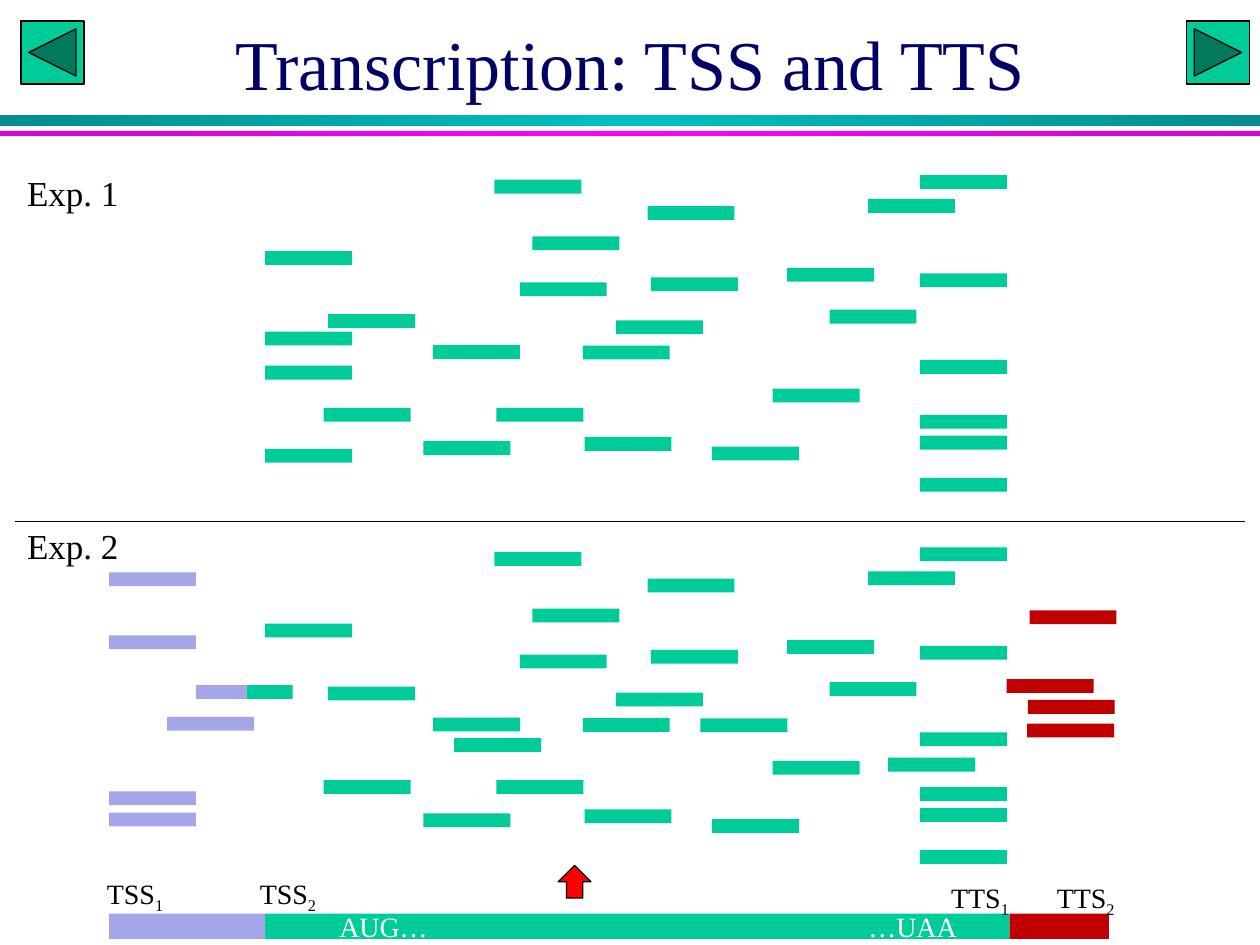
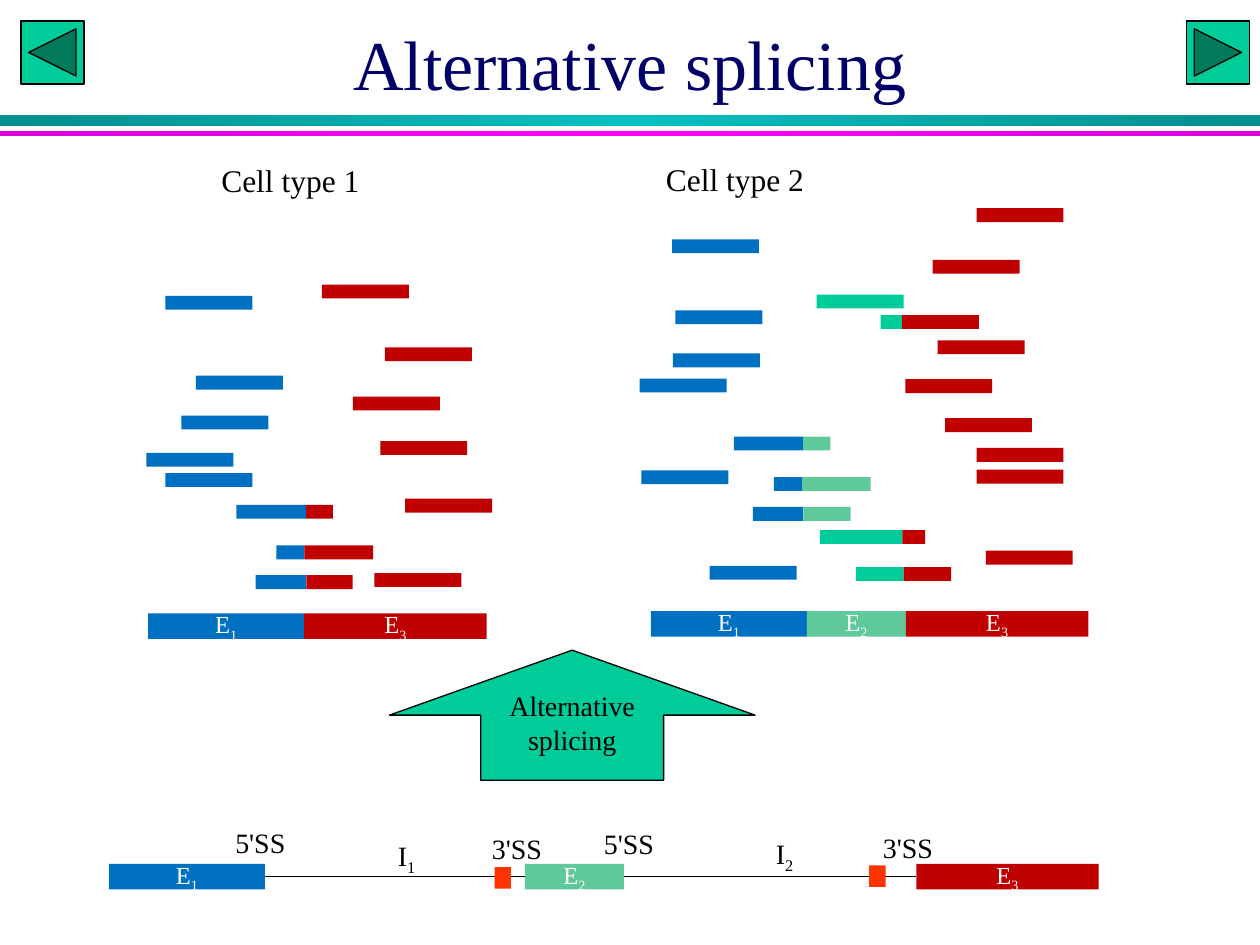
from copy import deepcopy

from lxml.etree import SubElement
from pptx import Presentation
from pptx.dml.color import RGBColor
from pptx.enum.shapes import MSO_CONNECTOR, MSO_SHAPE
from pptx.enum.text import MSO_ANCHOR, PP_ALIGN
from pptx.oxml.ns import qn
from pptx.util import Pt

# Shared look
FONT = "Times New Roman"
BLACK = RGBColor(0x00, 0x00, 0x00)
WHITE = RGBColor(0xFF, 0xFF, 0xFF)
NAVY = RGBColor(0x00, 0x00, 0x66)
GREEN = RGBColor(0x00, 0xCC, 0x99)
MINT = RGBColor(0x60, 0xC9, 0x9C)
LILAC = RGBColor(0xA5, 0xA5, 0xE9)
BLUE = RGBColor(0x00, 0x70, 0xC0)
DARK_RED = RGBColor(0xC0, 0x00, 0x00)
RED = RGBColor(0xFF, 0x00, 0x00)
ORANGE = RGBColor(0xFF, 0x33, 0x00)
TEAL_EDGE = RGBColor(0x00, 0x8E, 0x8E)
TEAL = RGBColor(0x00, 0xC0, 0xC0)
MAGENTA_EDGE = RGBColor(0xDA, 0x00, 0xDA)
MAGENTA = RGBColor(0xFF, 0x00, 0xFF)

SLIDE_WIDTH, SLIDE_HEIGHT = 720, 540
READ_WIDTH, READ_HEIGHT = 49.7, 7.9
BAR_HEIGHT = 14.6

# Bands: top, height, edge colour, middle colour
BANDS = [(66, 6, TEAL_EDGE, TEAL), (74.9, 2.9, MAGENTA_EDGE, MAGENTA)]
# Navigation buttons: preset, left
BUTTONS = [
    (MSO_SHAPE.ACTION_BUTTON_BACK_OR_PREVIOUS, 12),
    (MSO_SHAPE.ACTION_BUTTON_FORWARD_OR_NEXT, 678),
]

# Transcription: read positions (left, top)
SHARED_READS = [
    (242, 252), (282.5, 102.7), (151.5, 143.5), (297, 161.3), (370, 117.8),
    (187.5, 179.5), (333, 197.5), (372, 158.5), (185, 233), (334, 249.7),
    (441.5, 222), (407, 255.2), (304.2, 135), (449.8, 153), (496, 113.7),
    (474, 177), (352, 183), (247.5, 197.2), (283.7, 233),
]
LAST_EXON_LEFT = 525.7
LAST_EXON_TOPS = [100, 156.2, 205.7, 237, 249, 273]
SHARED_READS += [(LAST_EXON_LEFT, top) for top in LAST_EXON_TOPS]
EXPERIMENT_SHIFT = 212.8
FIRST_ONLY = [(151.5, 189.5), (151.5, 209), (151.5, 256.5)]
SECOND_ONLY = [(507.5, 433), (400.2, 410.5), (259.5, 421.8)]
UPSTREAM_READS = [(62.3, 327), (62.3, 363), (95.5, 409.6), (62.3, 452.2),
                  (62.3, 464.3)]
DOWNSTREAM_READS = [(588.3, 348.8), (575.2, 388), (587.3, 400), (587, 413.5)]
TSS_JUNCTION = (112, 391.5, 141, 167.3, LILAC, GREEN)
# Gene segments: left, right, colour
GENE_SEGMENTS = [(151.5, 577, GREEN), (62.3, 151.5, LILAC), (577, 633.7, DARK_RED)]
CODON_TABS = [35.3, 337.6]
# Labels: text, left, top, width, size, tab stops
TRANSCRIPTION_LABELS = [
    ("Exp. 1", 8.4, 94.3, 72, 20, []),
    ("Exp. 2", 8.4, 296, 72, 20, []),
    ("TSS_1\tTSS_2", 54, 497.5, 159, 16, [87.4]),
    ("TTS_1\tTTS_2", 536.4, 499.7, 117.5, 16, [60.4]),
]

# Splicing: whole reads by exon colour
EXON_READS = {
    BLUE: [
        (384, 136.8), (365.5, 216.3), (386, 177.3), (366.5, 268.8),
        (405.5, 323.3), (384.5, 202), (83.7, 258.8), (103.7, 237.5),
        (94.5, 270.4), (112, 214.7), (94.5, 169),
    ],
    DARK_RED: [
        (214, 327.5), (184, 162.6), (220, 198.5), (217.3, 252), (201.7, 226.7),
        (231.5, 285), (533, 148.5), (535.8, 194.5), (558, 119), (540, 239),
        (563.3, 314.7), (558, 256), (517.3, 216.7), (558, 268.4),
    ],
    GREEN: [(466.7, 168.3)],
}
# Reads across a junction: left, top, junction, right, two colours
JUNCTION_READS = [
    (146, 328.7, 175, 201.5, BLUE, DARK_RED),
    (158, 311.7, 174, 213.3, BLUE, DARK_RED),
    (135, 288.5, 175, 190.3, BLUE, DARK_RED),
    (430.3, 289.7, 459, 486, BLUE, MINT),
    (442.3, 272.6, 458.3, 497.5, BLUE, MINT),
    (419.4, 249.5, 459, 474.6, BLUE, MINT),
    (489, 324, 516.4, 543.6, GREEN, DARK_RED),
    (468.5, 302.9, 515.7, 528.6, GREEN, DARK_RED),
    (503.3, 180, 515.5, 559.4, GREEN, DARK_RED),
]
# Exons: width, colour
EXONS = {"E_1": (89.1, BLUE), "E_2": (56.5, MINT), "E_3": (104.3, DARK_RED)}
# Transcripts: left, top, exons
TRANSCRIPTS = [(84.7, 350.5, ["E_1", "E_3"]), (372, 349.2, ["E_1", "E_2", "E_3"])]
GENE_TOP, GENE_AXIS = 493.7, 501
GENE_EXONS = [("E_1", 62.3), ("E_2", 300), ("E_3", 523.6)]
ACCEPTOR_SITES = [(282.6, 495.5), (496.7, 494.6)]
SPLICING_LABELS = [
    ("Cell type 1", 119.4, 88.6, 128, 18, []),
    ("Cell type 2", 373.5, 88, 128, 18, []),
    ("I_1", 220.3, 475.7, 27.5, 16, []),
    ("I_2", 436.3, 474.3, 27.5, 16, []),
    ("5'SS", 127.4, 468.4, 52, 16, []),
    ("5'SS", 338, 468.8, 52, 16, []),
    ("3'SS", 274, 471.5, 52, 16, []),
    ("3'SS", 497.5, 471, 52, 16, []),
]


def apply_format(target, values):
    for name, value in values.items():
        setattr(target, name, value)


def write(shape, text, size, colour, align=PP_ALIGN.LEFT,
          anchor=MSO_ANCHOR.TOP, tabs=()):
    """Write text; the character after each underscore is a subscript."""
    apply_format(shape.text_frame, {"word_wrap": True, "vertical_anchor": anchor})
    para = shape.text_frame.paragraphs[0]
    para.alignment = align
    if tabs:
        tab_list = SubElement(para._p.get_or_add_pPr(), qn("a:tabLst"))
        for position in tabs:
            SubElement(tab_list, qn("a:tab"), pos=str(int(Pt(position))), algn="l")
    first, *rest = text.split("_")
    pieces = [(first, False)]
    for part in rest:
        pieces += [(part[0], True), (part[1:], False)]
    for content, lowered in pieces:
        if not content:
            continue
        span = para.add_run()
        span.text = content
        apply_format(span.font, {"name": FONT, "size": Pt(size)})
        span.font.color.rgb = colour
        if lowered:
            span._r.get_or_add_rPr().set("baseline", "-25000")


def add_shape(page, left, top, width, height, colour,
              preset=MSO_SHAPE.RECTANGLE, outlined=False):
    shape = page.shapes.add_shape(preset, Pt(left), Pt(top), Pt(width), Pt(height))
    shape.shadow.inherit = False
    shape.fill.solid()
    shape.fill.fore_color.rgb = colour
    if outlined:
        shape.line.color.rgb = BLACK
        shape.line.width = Pt(0.75)
    else:
        shape.line.fill.background()
    return shape


def add_line(page, start, end, top):
    line = page.shapes.add_connector(
        MSO_CONNECTOR.STRAIGHT, Pt(start), Pt(top), Pt(end), Pt(top))
    line.line.color.rgb = BLACK
    line.line.width = Pt(0.75)
    SubElement(line._element.spPr, qn("a:effectLst"))


def add_reads(page, reads, colour, shift=0):
    for left, top in reads:
        add_shape(page, left, top + shift, READ_WIDTH, READ_HEIGHT, colour)


def add_junction_read(page, left, top, junction, right, first, second):
    add_shape(page, left, top, junction - left, READ_HEIGHT, first)
    add_shape(page, junction, top, right - junction, READ_HEIGHT, second)


def add_exon(page, name, left, top):
    width, colour = EXONS[name]
    exon = add_shape(page, left, top, width, BAR_HEIGHT, colour)
    write(exon, name, 14, WHITE, PP_ALIGN.CENTER, MSO_ANCHOR.MIDDLE)
    return left + width


def add_labels(page, labels):
    for text, left, top, width, size, tabs in labels:
        box = page.shapes.add_textbox(Pt(left), Pt(top), Pt(width), Pt(size + 10.6))
        write(box, text, size, BLACK, tabs=tabs)


def add_band(page, top, height, edge, middle):
    band = add_shape(page, 0, top, SLIDE_WIDTH, height, edge)
    band.fill.gradient()
    band.fill.gradient_angle = 0
    stop_list = band._element.spPr.find(qn("a:gradFill")).find(qn("a:gsLst"))
    stop_list.append(deepcopy(stop_list[0]))
    colours = [(0, edge), (0.5, middle), (1, edge)]
    for stop, (position, colour) in zip(band.fill.gradient_stops, colours):
        stop.position = position
        stop.color.rgb = colour


def add_page(deck, title):
    page = deck.slides.add_slide(deck.slide_layouts[6])
    for band in BANDS:
        add_band(page, *band)
    for preset, left in BUTTONS:
        add_shape(page, left, 12, 36, 36, GREEN, preset, outlined=True)
    box = page.shapes.add_textbox(Pt(54), Pt(0), Pt(612), Pt(72))
    write(box, title, 40, NAVY, PP_ALIGN.CENTER, MSO_ANCHOR.MIDDLE)
    return page


def build_transcription(deck):
    page = add_page(deck, "Transcription: TSS and TTS")
    # Reads of both experiments
    add_reads(page, SHARED_READS + FIRST_ONLY, GREEN)
    add_reads(page, SHARED_READS, GREEN, EXPERIMENT_SHIFT)
    add_reads(page, SECOND_ONLY, GREEN)
    add_reads(page, UPSTREAM_READS, LILAC)
    add_reads(page, DOWNSTREAM_READS, DARK_RED)
    add_junction_read(page, *TSS_JUNCTION)
    add_line(page, 8.6, 711.4, 298)
    # Gene with its codons
    for left, right, colour in GENE_SEGMENTS:
        segment = add_shape(page, left, 522, right - left, BAR_HEIGHT, colour)
        if colour == GREEN:
            write(segment, "\tAUG…\t…UAA", 16, WHITE,
                  anchor=MSO_ANCHOR.MIDDLE, tabs=CODON_TABS)
    add_shape(page, 319, 494.5, 18.7, 18.7, RED, MSO_SHAPE.UP_ARROW, outlined=True)
    add_labels(page, TRANSCRIPTION_LABELS)


def build_splicing(deck):
    page = add_page(deck, "Alternative splicing")
    # Reads of both cell types
    for colour, reads in EXON_READS.items():
        add_reads(page, reads, colour)
    for read in JUNCTION_READS:
        add_junction_read(page, *read)
    # Spliced transcripts
    for left, top, names in TRANSCRIPTS:
        for name in names:
            left = add_exon(page, name, left, top)
    arrow = add_shape(page, 222.5, 371.5, 209, 74.3, GREEN,
                      MSO_SHAPE.UP_ARROW, outlined=True)
    write(arrow, "Alternative splicing", 16, BLACK, PP_ALIGN.CENTER)
    # Gene with introns between the exons
    intron_start = None
    for name, left in GENE_EXONS:
        if intron_start is not None:
            add_line(page, intron_start, left, GENE_AXIS)
        intron_start = add_exon(page, name, left, GENE_TOP)
    for left, top in ACCEPTOR_SITES:
        add_shape(page, left, top, 9.4, 12.3, ORANGE)
    add_labels(page, SPLICING_LABELS)


def main():
    deck = Presentation()
    apply_format(deck, {"slide_width": Pt(SLIDE_WIDTH), "slide_height": Pt(SLIDE_HEIGHT)})
    build_transcription(deck)
    build_splicing(deck)
    deck.save("out.pptx")


if __name__ == "__main__":
    main()
